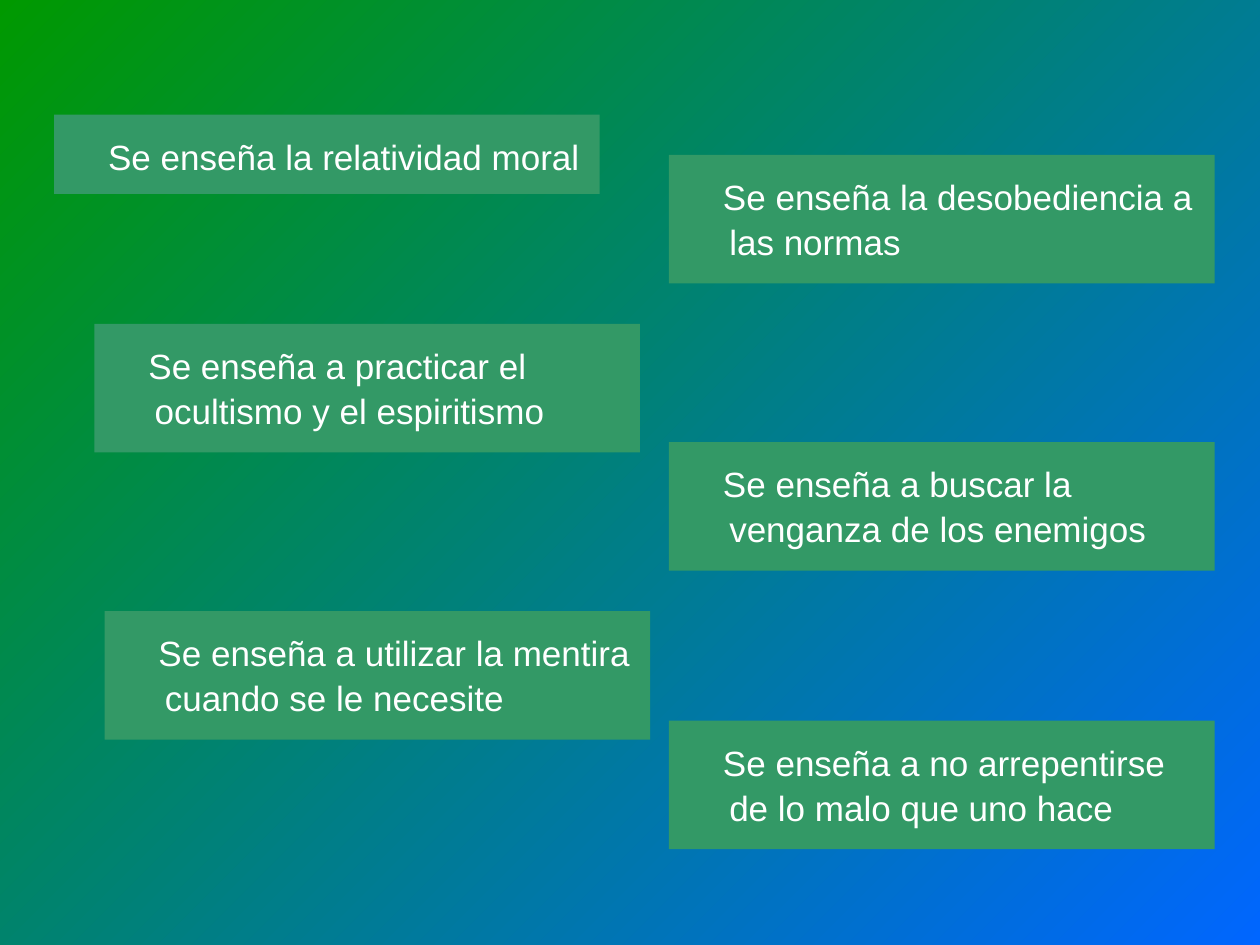
from dataclasses import dataclass

from pptx import Presentation
from pptx.dml.color import RGBColor
from pptx.enum.shapes import MSO_SHAPE
from pptx.enum.text import MSO_ANCHOR, PP_ALIGN
from pptx.util import Inches, Pt


@dataclass(frozen=True)
class Theme:
    start: RGBColor = RGBColor(0x00, 0x99, 0x00)
    end: RGBColor = RGBColor(0x00, 0x66, 0xFF)
    box: RGBColor = RGBColor(0x33, 0x99, 0x66)
    text: RGBColor = RGBColor(0xFF, 0xFF, 0xFF)
    font: str = "Arial"
    size: Pt = Pt(20)
    leading: Pt = Pt(25.7)


theme = Theme()
prs = Presentation()
prs.slide_width, prs.slide_height = Inches(10), Inches(7.5)
s = prs.slides.add_slide(prs.slide_layouts[6])

bg = s.background.fill
bg.gradient()
bg.gradient_angle = 315
for stop, color, position in zip(bg.gradient_stops, (theme.start, theme.end), (0, 1)):
    stop.color.rgb = color
    stop.position = position

BOX_WIDTH = 4.33
ONE_LINE, TWO_LINES = 0.63, 1.02
RIGHT_COLUMN = 5.31

# left, top, height, text: the boxes alternate between the two columns
teachings = [
    (0.43, 0.91, ONE_LINE, "Se enseña la relatividad moral"),
    (RIGHT_COLUMN, 1.23, TWO_LINES, "Se enseña la desobediencia a las normas"),
    (0.75, 2.57, TWO_LINES, "Se enseña a practicar el ocultismo y el espiritismo"),
    (RIGHT_COLUMN, 3.51, TWO_LINES, "Se enseña a buscar la venganza de los enemigos"),
    (0.83, 4.85, TWO_LINES, "Se enseña a utilizar la mentira cuando se le necesite"),
    (RIGHT_COLUMN, 5.72, TWO_LINES, "Se enseña a no arrepentirse de lo malo que uno hace"),
]

for left, top, height, text in teachings:
    sp = s.shapes.add_shape(MSO_SHAPE.RECTANGLE, Inches(left), Inches(top),
                            Inches(BOX_WIDTH), Inches(height))
    sp.shadow.inherit = False
    sp.fill.solid()
    sp.fill.fore_color.rgb = theme.box
    sp.line.fill.background()

    tf = sp.text_frame
    tf.word_wrap = True
    tf.vertical_anchor = MSO_ANCHOR.TOP
    tf.margin_top, tf.margin_bottom = Inches(0.14), Inches(0.05)

    p = tf.paragraphs[0]
    p.text = text
    p.alignment = PP_ALIGN.LEFT
    p.line_spacing = theme.leading
    p.font.name, p.font.size = theme.font, theme.size
    p.font.color.rgb = theme.text
    # hanging indent: the first line starts slightly left of the second
    pPr = p._p.get_or_add_pPr()
    pPr.set("marL", str(Inches(0.38)))
    pPr.set("indent", str(Inches(-0.05)))

prs.save("out.pptx")
